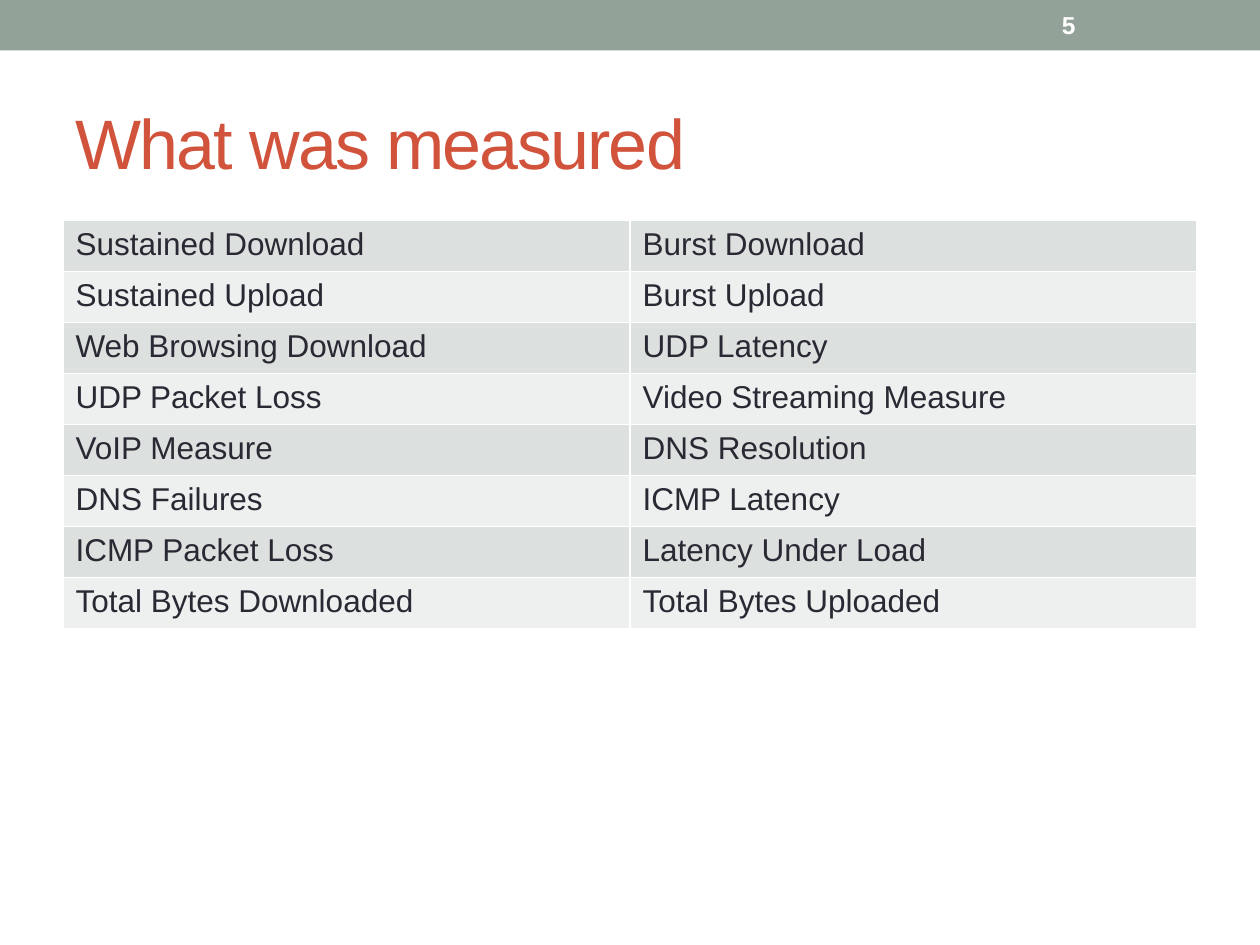
from dataclasses import dataclass

from lxml import etree
from pptx import Presentation
from pptx.dml.color import RGBColor
from pptx.enum.shapes import MSO_SHAPE
from pptx.enum.text import MSO_ANCHOR
from pptx.oxml.ns import qn
from pptx.util import Inches, Pt

RECT = MSO_SHAPE.RECTANGLE
MIDDLE = MSO_ANCHOR.MIDDLE


@dataclass(frozen=True)
class Theme:
    font: str = "Arial"
    bar: str = "93A299"
    title: str = "D2533C"
    ink: str = "292934"
    white: str = "FFFFFF"
    bands: tuple = ("DCE0DE", "EEF0EF")
    title_size: int = 40
    body_size: int = 18
    page_size: int = 14


THEME = Theme()

ROWS = [
    ("Sustained Download", "Burst Download"),
    ("Sustained Upload", "Burst Upload"),
    ("Web Browsing Download", "UDP Latency"),
    ("UDP Packet Loss", "Video Streaming Measure"),
    ("VoIP Measure", "DNS Resolution"),
    ("DNS Failures", "ICMP Latency"),
    ("ICMP Packet Loss", "Latency Under Load"),
    ("Total Bytes Downloaded", "Total Bytes Uploaded"),
]


def paint(fill, color):
    fill.solid()
    fill.fore_color.rgb = RGBColor.from_string(color)


def write(frame, text, size, color, bold=False, track=0):
    """Put one run in the frame; track is letter spacing in points."""
    run = frame.paragraphs[0].add_run()
    run.text = text
    font = run.font
    font.name = THEME.font
    font.size = Pt(size)
    font.bold = bold
    font.color.rgb = RGBColor.from_string(color)
    if track:
        font._element.set("spc", str(track * 100))


def add_bar(slide, width, height):
    bar = slide.shapes.add_shape(RECT, 0, 0, width, height)
    bar.shadow.inherit = False
    paint(bar.fill, THEME.bar)
    bar.line.fill.background()


def add_text(slide, box, text, **style):
    shape = slide.shapes.add_textbox(*map(Inches, box))
    frame = shape.text_frame
    frame.word_wrap = True
    frame.vertical_anchor = MIDDLE
    write(frame, text, **style)


def add_edges(cell, color, width):
    props = cell._tc.get_or_add_tcPr()
    for i, side in enumerate(("lnL", "lnR", "lnT", "lnB")):
        line = etree.Element(qn(f"a:{side}"), w=str(Pt(width)))
        fill = etree.SubElement(line, qn("a:solidFill"))
        etree.SubElement(fill, qn("a:srgbClr"), val=color)
        props.insert(i, line)


def add_grid(slide, box, rows):
    frame = slide.shapes.add_table(len(rows), len(rows[0]), *map(Inches, box))
    table = frame.table
    table.first_row = False
    table.horz_banding = False
    for r, row in enumerate(rows):
        for c, text in enumerate(row):
            cell = table.cell(r, c)
            paint(cell.fill, THEME.bands[r % 2])
            add_edges(cell, THEME.white, 1)
            write(cell.text_frame, text, THEME.body_size, THEME.ink)


def main():
    deck = Presentation()
    deck.slide_width = Inches(10)
    deck.slide_height = Inches(7.5)
    slide = deck.slides.add_slide(deck.slide_layouts[6])
    paint(slide.background.fill, THEME.white)
    add_bar(slide, deck.slide_width, Inches(0.4))
    add_text(slide, (0.5, 0.58, 9, 1.08), "What was measured",
             size=THEME.title_size, color=THEME.title, track=-1)
    add_grid(slide, (0.5, 1.75, 9, 3.24), ROWS)
    add_text(slide, (8.33, 0.02, 1.17, 0.36), "5",
             size=THEME.page_size, color=THEME.white, bold=True)
    deck.save("out.pptx")


if __name__ == "__main__":
    main()
